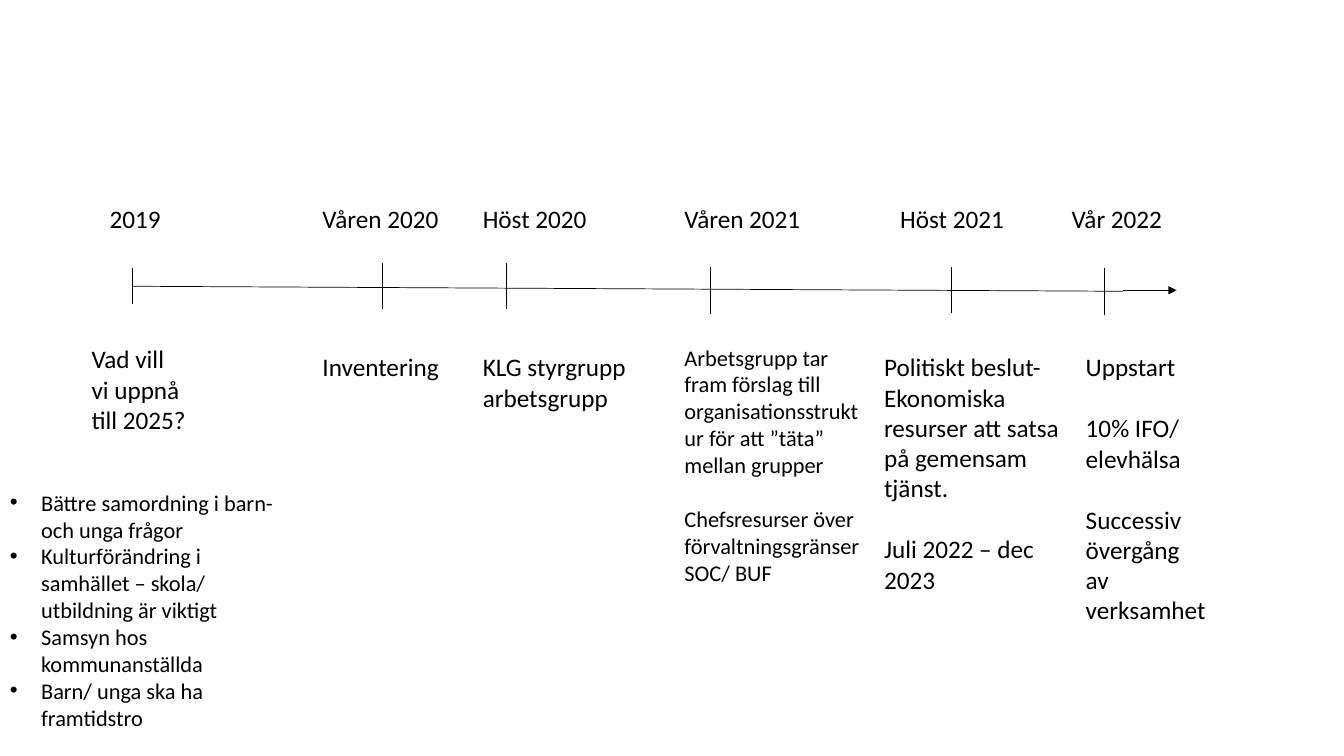
from pptx import Presentation
from pptx.dml.color import RGBColor
from pptx.enum.shapes import MSO_CONNECTOR as Conn
from pptx.enum.text import MSO_AUTO_SIZE as Fit
from pptx.oxml.ns import qn
from pptx.util import Inches, Pt
from lxml.etree import SubElement as Sub

BLACK = RGBColor(0, 0, 0)


class Deck:
    """Style and current slide."""
    font = "Calibri"
    lead = 1.22  # line height relative to the text size

    def __init__(self):
        self.prs = Presentation()
        self.prs.slide_width = Inches(13.33)
        self.prs.slide_height = Inches(7.5)
        self.slide = self.prs.slides.add_slide(self.prs.slide_layouts[6])

    def line(self, x1, y1, x2, y2, arrow=False):
        line = self.slide.shapes.add_connector(
            Conn.STRAIGHT, Inches(x1), Inches(y1), Inches(x2), Inches(y2))
        line.line.color.rgb = BLACK
        line.line.width = Pt(0.5)
        props = line._element.spPr
        if arrow:
            Sub(props.find(qn("a:ln")), qn("a:tailEnd"), type="triangle")
        Sub(props, qn("a:effectLst"))

    def text(self, x, y, w, h, groups, size=18, bullet=False):
        """Each group is a list of paragraphs; groups are one line apart."""
        box = self.slide.shapes.add_textbox(
            Inches(x), Inches(y), Inches(w), Inches(h))
        frame = box.text_frame
        frame.word_wrap = True
        frame.auto_size = Fit.SHAPE_TO_FIT_TEXT
        para = None
        for group in groups:
            for i, words in enumerate(group):
                gap = para is not None and i == 0
                para = frame.add_paragraph() if para else frame.paragraphs[0]
                para.text = words
                if gap:
                    para.space_before = Pt(round(size * self.lead, 1))
                if bullet:
                    self.bullet(para)
                para.font.name = self.font
                para.font.size = Pt(size)
                para.font.color.rgb = BLACK

    def bullet(self, para):
        props = para._p.get_or_add_pPr()
        props.set("marL", str(Inches(0.31)))
        props.set("indent", str(-Inches(0.31)))
        Sub(props, qn("a:buFont"), typeface="Arial")
        Sub(props, qn("a:buChar"), char="•")


def main():
    deck = Deck()

    # Time axis
    deck.line(1.31, 2.84, 11.14, 2.89)
    deck.line(11.14, 2.88, 11.67, 2.88, arrow=True)

    # Tick marks: x, top, bottom
    for x, top, end in [(1.31, 2.66, 3.02), (3.79, 2.61, 3.07),
                        (5.02, 2.61, 3.07), (7.05, 2.65, 3.12),
                        (9.44, 2.65, 3.11), (10.95, 2.66, 3.13)]:
        deck.line(x, top, x, end)

    # Dates above the axis
    for x, w, date in [(0.99, 0.97, "2019"), (3.1, 1.39, "Våren 2020"),
                       (4.69, 1.44, "Höst 2020"), (6.69, 1.46, "Våren 2021"),
                       (8.83, 1.84, "Höst 2021"), (10.53, 1.14, "Vår 2022")]:
        deck.text(x, 1.97, w, 0.4, [[date]])

    # Steps below the axis
    deck.text(0.81, 3.36, 1.14, 1.01, [["Vad vill vi uppnå till 2025?"]])
    deck.text(3.1, 3.44, 1.59, 0.4, [["Inventering"]])
    deck.text(4.69, 3.44, 1.74, 0.71, [["KLG styrgrupp", "arbetsgrupp"]])
    deck.text(6.69, 3.36, 1.99, 2.52, [
        ["Arbetsgrupp tar fram förslag till organisationsstruktur "
         "för att ”täta” mellan grupper"],
        ["Chefsresurser över förvaltningsgränser", "SOC/ BUF"]], size=16)
    deck.text(8.67, 3.44, 2.06, 2.52, [
        ["Politiskt beslut-",
         "Ekonomiska resurser att satsa på gemensam tjänst."],
        ["Juli 2022 – dec 2023"]])
    deck.text(10.67, 3.44, 1.39, 2.83, [
        ["Uppstart"], ["10% IFO/ elevhälsa"],
        ["Successiv övergång av verksamhet"]])

    # Goals for 2025
    deck.text(0, 4.8, 2.96, 2.52, [[
        "Bättre samordning i barn- och unga frågor",
        "Kulturförändring i samhället – skola/ utbildning är viktigt",
        "Samsyn hos kommunanställda",
        "Barn/ unga ska ha framtidstro"]], size=16, bullet=True)

    deck.prs.save("out.pptx")


if __name__ == "__main__":
    main()
